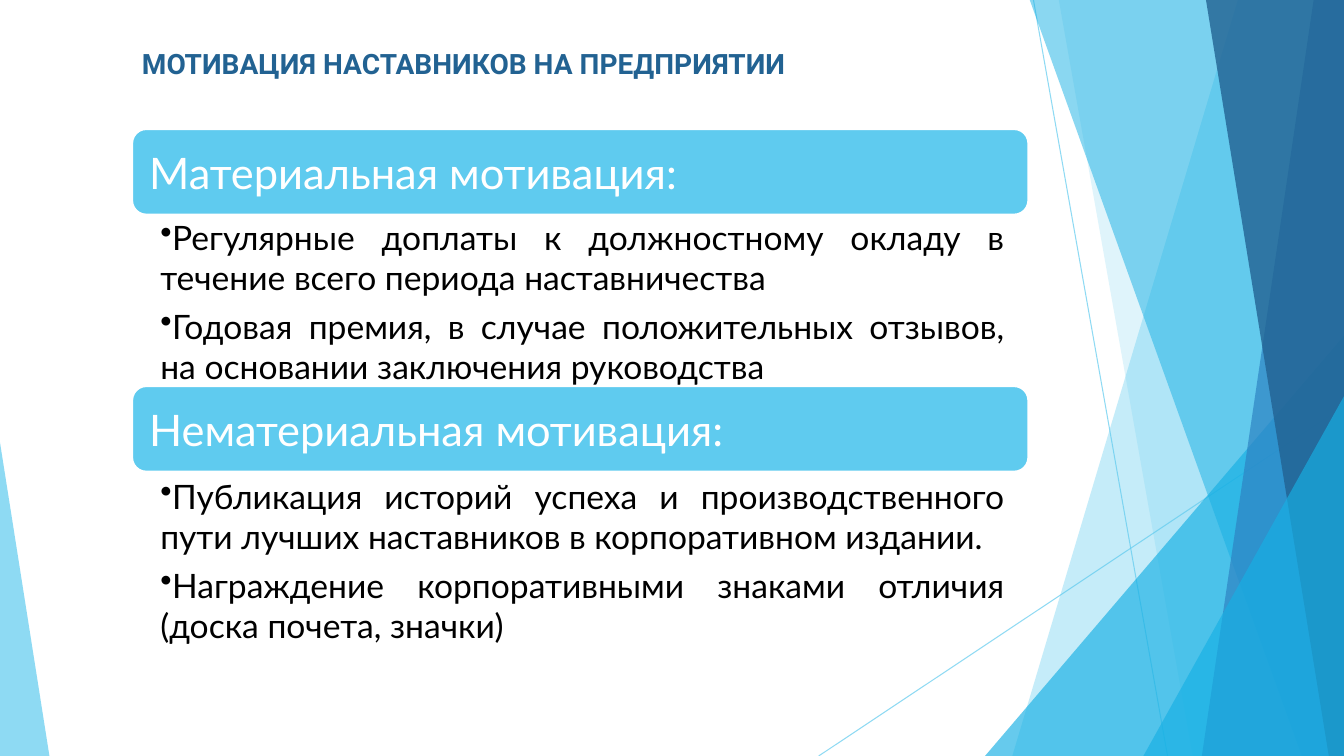
from lxml.etree import SubElement
from pptx import Presentation
from pptx.dml.color import RGBColor
from pptx.enum.shapes import MSO_CONNECTOR, MSO_SHAPE
from pptx.enum.text import MSO_ANCHOR, PP_ALIGN
from pptx.oxml.ns import qn
from pptx.util import Inches, Pt

SKY = RGBColor(0x5F, 0xCB, 0xEF)
CYAN = RGBColor(0x17, 0xB0, 0xE4)
BLUE = RGBColor(0x2E, 0x83, 0xC3)
NAVY = RGBColor(0x22, 0x62, 0x92)
WHITE = RGBColor(0xFF, 0xFF, 0xFF)
BLACK = RGBColor(0, 0, 0)

TITLE = "МОТИВАЦИЯ НАСТАВНИКОВ НА ПРЕДПРИЯТИИ"
GROUPS = [
    ("Материальная мотивация:", 1.28, 2.11, 1.72, [
        "Регулярные доплаты к должностному окладу в течение всего периода наставничества",
        "Годовая премия, в случае положительных отзывов, на основании заключения руководства"]),
    ("Нематериальная мотивация:", 3.83, 4.68, 2.46, [
        "Публикация историй успеха и производственного пути лучших наставников в корпоративном издании.",
        "Награждение корпоративными знаками отличия (доска почета, значки)"]),
]
WIDE, HIGH = 13.33, 7.5
LEFT, WIDTH, BAR, EDGE = 1.31, 8.89, 0.85, 0.04
RAYS = [((10.25, 0), (11.58, HIGH)), ((WIDE, 4.03), (8.12, HIGH))]
BANDS = [
    ("free", 12.28, 10.04, SKY, 36),
    ("free", 10.5, 11.83, SKY, 20),
    ("tri", (9.77, 3.33, 3.56, 4.17), 1, CYAN, 66),
    ("free", 10.21, 12.91, CYAN, 50),
    ("free", 13.03, 11.92, BLUE, 70),
    ("free", 11.96, 13.18, NAVY, 80),
    ("tri", (11.34, 3.93, 1.99, 3.57), 1, CYAN, 66),
    ("tri", (0, 4.39, 0.49, 3.11), 0, SKY, 70),
]
HEAD = {"size": Pt(20), "name": "Roboto", "bold": True}
LABEL = {"size": Pt(31), "name": "Lato"}
BODY = {"size": Pt(24), "name": "Lato"}

deck = Presentation()
deck.slide_width, deck.slide_height = Inches(WIDE), Inches(HIGH)
slide = deck.slides.add_slide(deck.slide_layouts[6])
shapes = slide.shapes


def fade(item, part):
    for node in item._element.spPr.iter(qn("a:srgbClr")):
        SubElement(node, qn("a:alpha"), val=str(part * 1000))


def paint(shape, color):
    shape.shadow.inherit = False
    shape.fill.solid()
    shape.fill.fore_color.rgb = color
    shape.line.fill.background()


def write(box, lines, font, color, pads, align=PP_ALIGN.LEFT,
          anchor=MSO_ANCHOR.TOP, dots=False):
    area = shapes.add_textbox(*map(Inches, box))
    frame = area.text_frame
    sides = ("margin_left", "margin_top", "margin_right", "margin_bottom")
    style = dict(zip(sides, map(Inches, pads)), word_wrap=True, vertical_anchor=anchor)
    for key, value in style.items():
        setattr(frame, key, value)
    for rank, line in enumerate(lines):
        para = frame.add_paragraph() if rank else frame.paragraphs[0]
        para.alignment = align
        run = para.add_run()
        run.text = line
        for key, value in font.items():
            setattr(run.font, key, value)
        run.font.color.rgb = color
        if dots:
            para.space_after = Pt(6)
            props = para._p.get_or_add_pPr()
            props.set("marL", "0")
            props.set("indent", "0")
            SubElement(props, qn("a:buChar"), char="•")


for start, end in RAYS:
    ray = shapes.add_connector(MSO_CONNECTOR.STRAIGHT, *map(Inches, start + end))
    ray.line.color.rgb = SKY
    ray.line.width = Pt(0.75)
    fade(ray, 70)
    SubElement(ray._element.spPr, qn("a:effectLst"))

for kind, first, last, color, part in BANDS:
    if kind == "free":
        pen = shapes.build_freeform(Inches(first), Inches(-0.01), scale=1.0)
        points = [(WIDE, -0.01), (WIDE, HIGH), (last, HIGH)]
        pen.add_line_segments([(Inches(x), Inches(y)) for x, y in points], close=True)
        band = pen.convert_to_shape()
    else:
        band = shapes.add_shape(MSO_SHAPE.ISOSCELES_TRIANGLE, *map(Inches, first))
        band.adjustments[0] = last
    paint(band, color)
    fade(band, part)

write((LEFT, 0.41, 7.24, 0.44), [TITLE], HEAD, NAVY, (0.1, 0.05, 0.1, 0.05))

for label, top, low, tall, items in GROUPS:
    bar = shapes.add_shape(MSO_SHAPE.ROUNDED_RECTANGLE,
                           *map(Inches, (LEFT, top, WIDTH, BAR)))
    paint(bar, SKY)
    bar.line.color.rgb = WHITE
    bar.line.width = Pt(1.5)
    write((LEFT + EDGE, top + EDGE, WIDTH - 2 * EDGE, BAR - 2 * EDGE), [label],
          LABEL, WHITE, (0.13,) * 4, anchor=MSO_ANCHOR.MIDDLE)
    write((LEFT, low, WIDTH, tall), items, BODY, BLACK,
          (0.28, 0.04, 0.24, 0.04), align=PP_ALIGN.JUSTIFY, dots=True)

deck.save("out.pptx")
